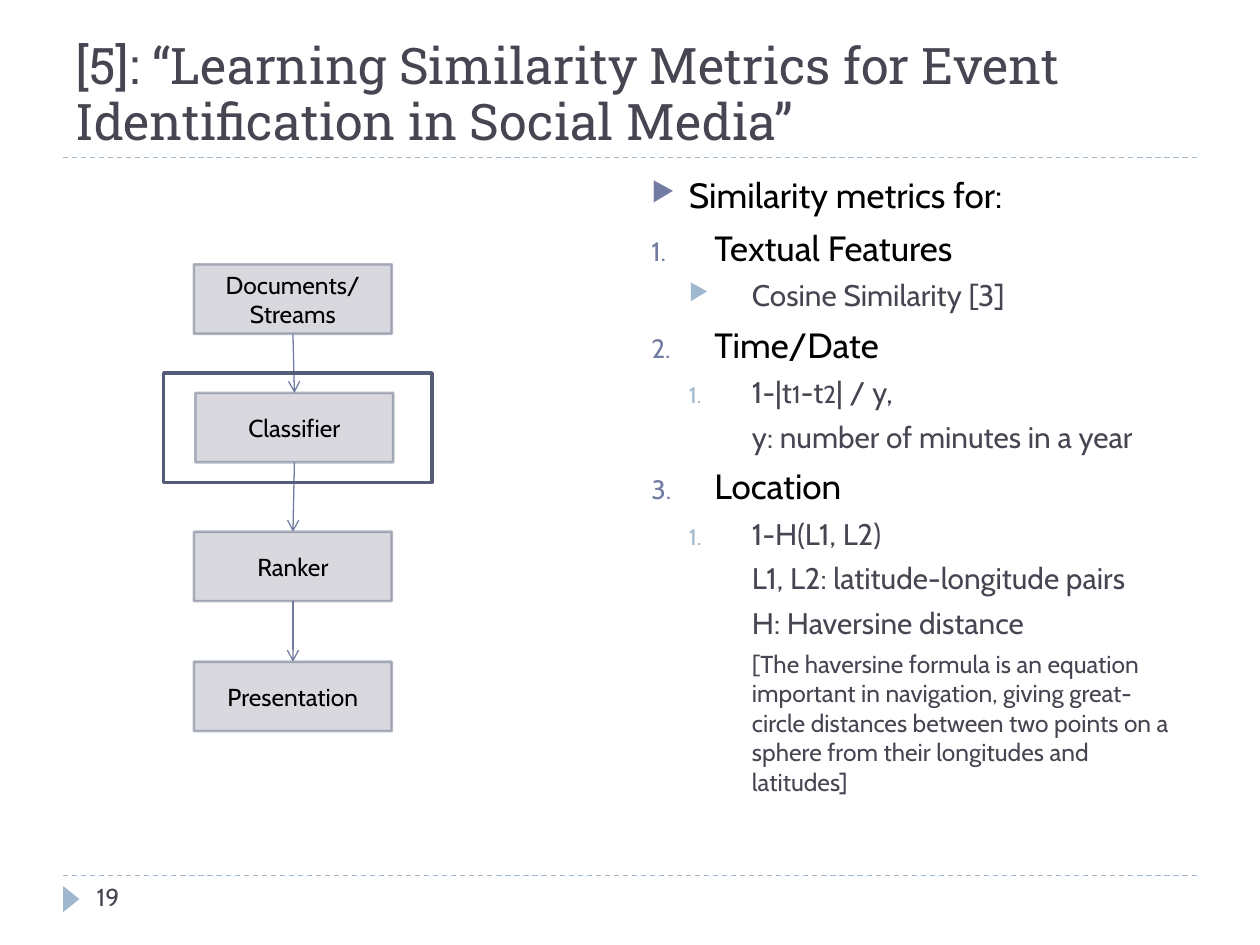
from pptx import Presentation
from pptx import util as u
from pptx.dml.color import RGBColor
from pptx.enum import dml, shapes, text
from pptx.oxml.ns import qn
from dataclasses import dataclass
from lxml import etree


@dataclass(frozen=True)
class Theme:
    head: str = "Roboto Slab"
    body: str = "Cabin"
    ink: str = "464653"
    black: str = "000000"
    accent: str = "727CA3"
    light: str = "9FB8CD"
    border: str = "545C79"
    box: str = "D8D8DE"
    title_pt: float = 28.8
    main_pt: float = 20
    sub_pt: float = 17
    small_pt: float = 14


T = Theme()

# Outline entries: (level, marker, runs of (text, size))
OUTLINE = [
    (0, "▶", [("Similarity metrics for:", T.main_pt)]),
    (0, "1.", [("Textual Features", T.main_pt)]),
    (1, "▶", [("Cosine Similarity [3]", T.sub_pt)]),
    (0, "1.", [("Time/Date", T.main_pt)]),
    (1, "1.", [("1-|t", T.sub_pt), ("1", T.small_pt), ("-t", T.sub_pt),
               ("2", T.small_pt), ("| / y,", T.sub_pt)]),
    (1, None, [("y: number of minutes in a year", T.sub_pt)]),
    (0, "1.", [("Location", T.main_pt)]),
    (1, "1.", [("1-H(L1, L2)", T.sub_pt)]),
    (1, None, [("L1, L2: latitude-longitude pairs", T.sub_pt)]),
    (1, None, [("H: Haversine distance", T.sub_pt)]),
    (1, None, [("[The haversine formula is an equation important in navigation, "
                "giving great-circle distances between two points on a sphere "
                "from their longitudes and latitudes]", T.small_pt)]),
]

# Flow steps: (lines, left, top) in cm
STEPS = [
    (["Documents/", "Streams"], 3.91, 5.33),
    (["Classifier"], 3.94, 7.92),
    (["Ranker"], 3.91, 10.72),
    (["Presentation"], 3.91, 13.34),
]


def rgb(value):
    return RGBColor.from_string(value)


def set_all(obj, formats):
    for name, value in formats.items():
        setattr(obj, name, value)


def sub(parent, tag, **attrs):
    return etree.SubElement(parent, qn(tag), attrs)


def add_run(p, words, size, color, font=T.body):
    r = p.add_run()
    r.text = words
    set_all(r.font, {"size": u.Pt(size), "name": font})
    r.font.color.rgb = rgb(color)


def add_text(s, left, top, width, height, anchor=text.MSO_ANCHOR.TOP):
    sp = s.shapes.add_textbox(*map(u.Cm, (left, top, width, height)))
    set_all(sp.text_frame, {"word_wrap": True, "vertical_anchor": anchor})
    return sp.text_frame


def add_shape(s, kind, at, fill=None, line=None, weight=0):
    sp = s.shapes.add_shape(kind, *map(u.Cm, at))
    sp.shadow.inherit = False
    if fill:
        sp.fill.solid()
        sp.fill.fore_color.rgb = rgb(fill)
    else:
        sp.fill.background()
    if line:
        sp.line.color.rgb = rgb(line)
        sp.line.width = u.Pt(weight)
    else:
        sp.line.fill.background()
    return sp


def add_line(s, color, start=(0, 0), end=(0, 0)):
    c = s.shapes.add_connector(shapes.MSO_CONNECTOR.STRAIGHT,
                               *map(u.Cm, (*start, *end)))
    c.line.color.rgb = rgb(color)
    c.line.width = u.Pt(0.75)
    return c


def no_shadow(c):
    sub(c._element.spPr, "a:effectLst")


def add_rule(s, y):
    c = add_line(s, T.light, (1.27, y), (24.13, y))
    c.line.dash_style = dml.MSO_LINE.DASH
    no_shadow(c)


def add_step(s, lines, left, top):
    sp = add_shape(s, shapes.MSO_SHAPE.RECTANGLE, (left, top, 3.99, 1.4),
                   T.box, T.border, 1.5)
    clr = sp.line._ln.find(qn("a:solidFill"))[0]
    sub(clr, "a:alpha", val="43000")
    tf = sp.text_frame
    set_all(tf, {"word_wrap": True, "vertical_anchor": text.MSO_ANCHOR.MIDDLE})
    for i, words in enumerate(lines):
        p = tf.add_paragraph() if i else tf.paragraphs[0]
        p.alignment = text.PP_ALIGN.CENTER
        add_run(p, words, T.small_pt, T.black)
    return sp


def add_arrow(s, upper, lower):
    c = add_line(s, T.accent)
    c.begin_connect(upper, 2)
    c.end_connect(lower, 0)
    sub(c.line._ln, "a:tailEnd", type="arrow")
    no_shadow(c)


def add_marker(p, marker, color, left, hang):
    pPr = p._p.get_or_add_pPr()
    pPr.set("marL", str(u.Cm(left)))
    pPr.set("indent", str(-u.Cm(hang) if marker else 0))
    if not marker:
        sub(pPr, "a:buNone")
        return
    sub(sub(pPr, "a:buClr"), "a:srgbClr", val=color)
    sub(pPr, "a:buSzPct", val="76000")
    if marker == "1.":
        sub(pPr, "a:buAutoNum", type="arabicPeriod")
    else:
        sub(pPr, "a:buChar", char=marker)


def add_outline(s):
    tf = add_text(s, 12.88, 3.38, 11.23, 13.72)
    for i, (level, marker, runs) in enumerate(OUTLINE):
        p = tf.add_paragraph() if i else tf.paragraphs[0]
        set_all(p, {"level": level, "space_before": u.Pt(5 if level else 6)})
        left = 2.03 if level else 1.27 if i else 0.76
        add_marker(p, marker, T.light if level else T.accent, left, min(left, 1.27))
        for words, size in runs:
            add_run(p, words, size, T.ink if level else T.black)


def main():
    prs = Presentation()
    set_all(prs, {"slide_width": u.Cm(25.4), "slide_height": u.Cm(19.05)})
    s = prs.slides.add_slide(prs.slide_layouts[6])

    # Rules and page marker
    for y in (17.65, 3.18):
        add_rule(s, y)
    mark = add_shape(s, shapes.MSO_SHAPE.ISOSCELES_TRIANGLE,
                     (1.17, 17.96, 0.53, 0.33), T.light)
    mark.rotation = 90

    # Title
    p = add_text(s, 1.27, 0.64, 22.86, 2.54, text.MSO_ANCHOR.BOTTOM).paragraphs[0]
    p.line_spacing = 0.92
    add_run(p, "[5]: “Learning Similarity Metrics for Event Identification "
               "in Social Media”", T.title_pt, T.ink, T.head)

    # Outline of metrics
    add_outline(s)

    # Flow chart with the classifier framed
    steps = [add_step(s, *step) for step in STEPS]
    for upper, lower in zip(steps, steps[1:]):
        add_arrow(s, upper, lower)
    add_shape(s, shapes.MSO_SHAPE.RECTANGLE, (3.3, 7.52, 5.41, 2.21),
              line=T.border, weight=2)

    # Page number
    p = add_text(s, 1.7, 17.65, 5.51, 1.02).paragraphs[0]
    add_run(p, "19", T.small_pt, T.ink)

    prs.save("out.pptx")


if __name__ == "__main__":
    main()
